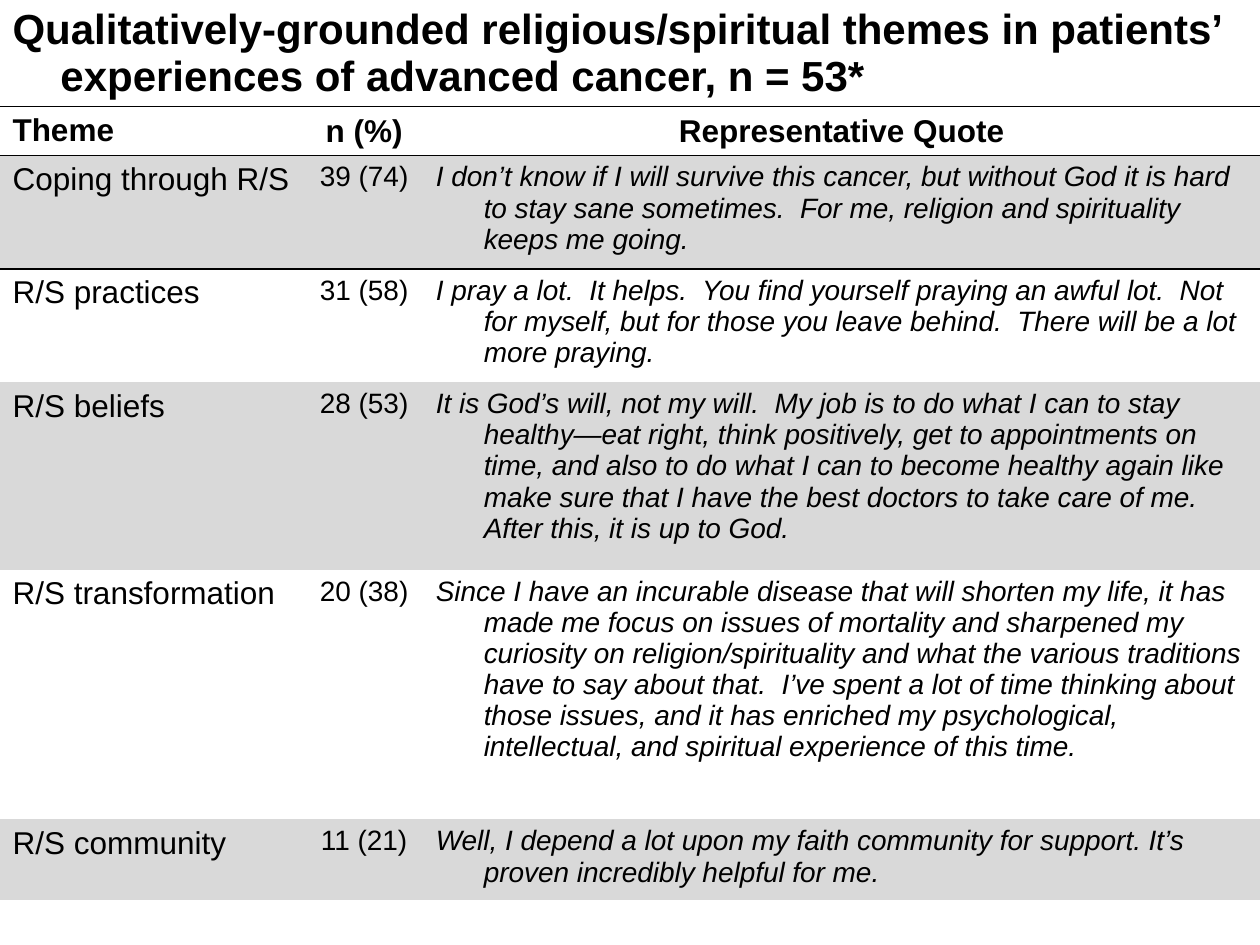
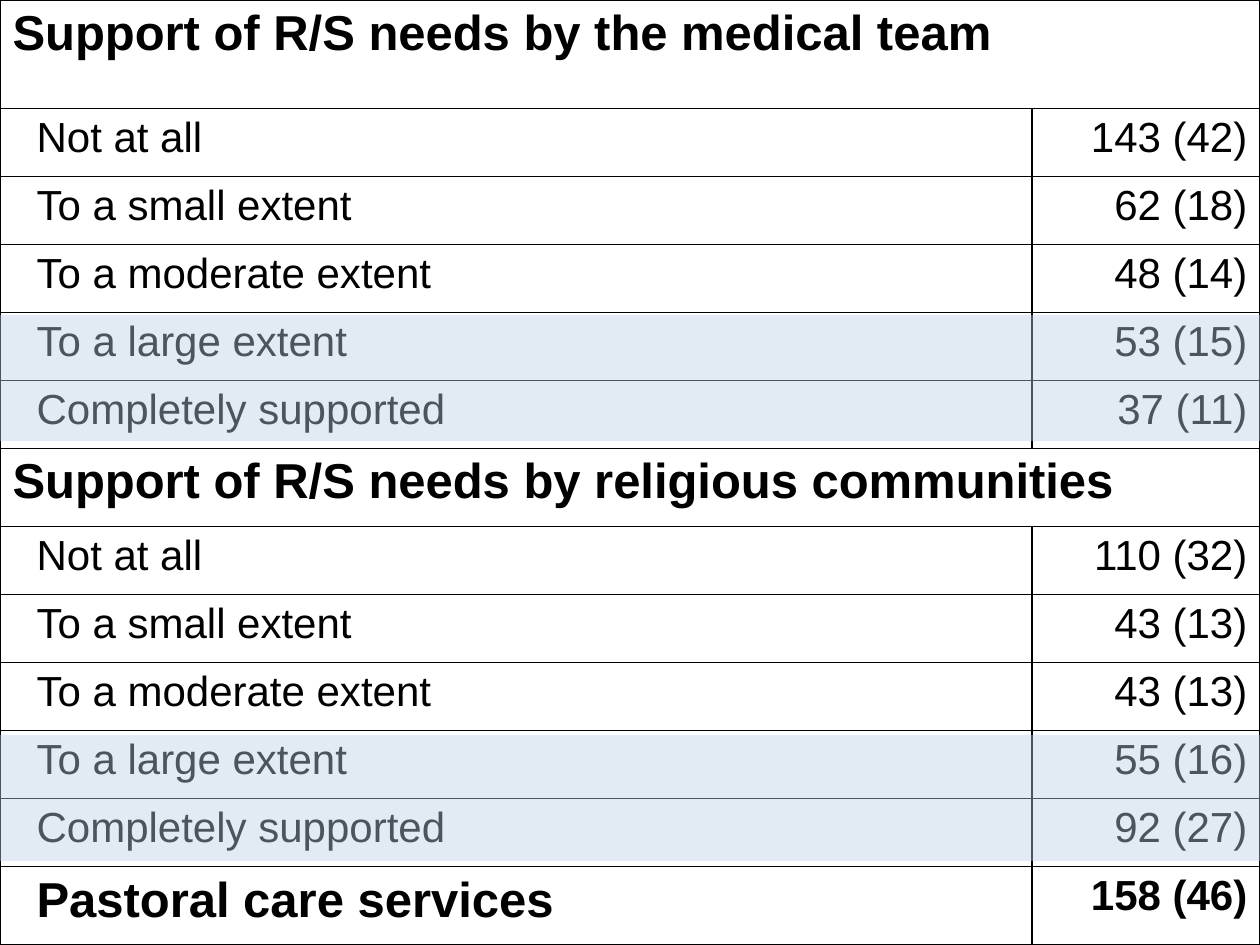
from dataclasses import dataclass

from lxml import etree
from pptx import Presentation
from pptx.dml.color import RGBColor
from pptx.enum.shapes import MSO_SHAPE
from pptx.enum.text import MSO_ANCHOR, PP_ALIGN
from pptx.oxml.ns import qn
from pptx.util import Inches, Pt

LEFT, CENTER, RIGHT = PP_ALIGN.LEFT, PP_ALIGN.CENTER, PP_ALIGN.RIGHT
TOP, BOTTOM = MSO_ANCHOR.TOP, MSO_ANCHOR.BOTTOM
RECTANGLE = MSO_SHAPE.RECTANGLE
PLAIN_TABLE_STYLE = "{2D5ABB26-0587-4C30-8999-92F81FD0307C}"


@dataclass(frozen=True)
class Theme:
    font: str = "Arial"
    ink: str = "000000"
    paper: str = "FFFFFF"
    stripe: str = "D9D9D9"
    highlight: str = "B9CDE5"
    highlight_alpha: int = 41
    rule: float = 1
    section_size: int = 28
    large_size: int = 24
    label_size: int = 18
    quote_size: int = 16
    hanging: float = 0.38
    option_indent: float = 0.19


THEME = Theme()
SLIDE_WIDTH, SLIDE_HEIGHT = 10, 7.5

THEMES_TITLE = ("Qualitatively-grounded religious/spiritual themes in patients’ "
                "experiences of advanced cancer, n = 53*")
THEMES_HEADER = ("Theme", "n (%)", "Representative Quote")
THEMES = [
    ("Coping through R/S", "39 (74)",
     "I don’t know if I will survive this cancer, but without God it is hard to stay "
     "sane sometimes.  For me, religion and spirituality keeps me going."),
    ("R/S practices", "31 (58)",
     "I pray a lot.  It helps.  You find yourself praying an awful lot.  Not for myself, "
     "but for those you leave behind.  There will be a lot more praying."),
    ("R/S beliefs", "28 (53)",
     "It is God’s will, not my will.  My job is to do what I can to stay healthy—eat "
     "right, think positively, get to appointments on time, and also to do what I can to "
     "become healthy again like make sure that I have the best doctors to take care of "
     "me.  After this, it is up to God."),
    ("R/S transformation", "20 (38)",
     "Since I have an incurable disease that will shorten my life, it has made me focus "
     "on issues of mortality and sharpened my curiosity on religion/spirituality and what "
     "the various traditions have to say about that.  I’ve spent a lot of time thinking "
     "about those issues, and it has enriched my psychological, intellectual, and "
     "spiritual experience of this time."),
    ("R/S community", "11 (21)",
     "Well, I depend a lot upon my faith community for support. It’s proven incredibly "
     "helpful for me."),
]
THEMES_COLUMNS = (2.42, 0.94, 6.64)
THEMES_ROWS = (0.84, 0.39, 0.9, 0.9, 1.49, 1.98, 0.64, 0.55)

EXTENTS = ("Not at all", "To a small extent", "To a moderate extent",
           "To a large extent", "Completely supported")
SUPPORT = [
    ("Support of R/S needs by the medical team",
     ("143 (42)", "62 (18)", "48 (14)", "53 (15)", "37 (11)")),
    ("Support of R/S needs by religious communities",
     ("110 (32)", "43 (13)", "43 (13)", "55 (16)", "92 (27)")),
]
PASTORAL_CARE = ("Pastoral care services", "158 (46)")
SUPPORT_COLUMNS = (8.19, 1.81)
FIRST_SECTION_ROW, SECTION_ROW, EXTENT_ROW = 0.86, 0.62, 0.54
HIGHLIGHT_TOPS = (SLIDE_HEIGHT / 3, SLIDE_HEIGHT * 7 / 9)
HIGHLIGHT_HEIGHT = 1


def add_plain_table(slide, columns, rows):
    """Add a full-width table that has no styling of its own."""
    frame = slide.shapes.add_table(len(rows), len(columns), 0, 0,
                                   Inches(sum(columns)), Inches(sum(rows)))
    table = frame.table
    table.first_row = table.horz_banding = False
    table._tbl.tblPr.find(qn("a:tableStyleId")).text = PLAIN_TABLE_STYLE
    for column, width in zip(table.columns, columns):
        column.width = Inches(width)
    for row, height in zip(table.rows, rows):
        row.height = Inches(height)
    return table


def write(cell, text, size, align=LEFT, bold=False, italic=False,
          indent=0, hanging=0, anchor=TOP):
    cell.vertical_anchor = anchor
    para = cell.text_frame.paragraphs[0]
    para.alignment = align
    properties = para._p.get_or_add_pPr()
    properties.set("marL", str(Inches(indent + hanging)))
    properties.set("indent", str(Inches(-hanging)))
    span = para.add_run()
    span.text = text
    span.font.name = THEME.font
    span.font.size = Pt(size)
    span.font.bold = bold
    span.font.italic = italic
    span.font.color.rgb = RGBColor.from_string(THEME.ink)


def rule_cell(cell, sides):
    """Draw borders on the sides named, in the order L, R, T, B."""
    properties = cell._tc.get_or_add_tcPr()
    for position, side in enumerate(sides):
        line = etree.Element(qn(f"a:ln{side}"), w=str(Pt(THEME.rule)))
        fill = etree.SubElement(line, qn("a:solidFill"))
        etree.SubElement(fill, qn("a:srgbClr"), val=THEME.ink)
        properties.insert(position, line)


def fill_cell(cell, color):
    cell.fill.solid()
    cell.fill.fore_color.rgb = RGBColor.from_string(color)


def build_themes(slide):
    table = add_plain_table(slide, THEMES_COLUMNS, THEMES_ROWS)
    last_row, last_column = len(THEMES_ROWS) - 1, len(THEMES_COLUMNS) - 1
    for row in (0, last_row):
        table.cell(row, 0).merge(table.cell(row, last_column))

    write(table.cell(0, 0), THEMES_TITLE, THEME.large_size, bold=True,
          hanging=THEME.hanging, anchor=BOTTOM)
    for column, heading in enumerate(THEMES_HEADER):
        write(table.cell(1, column), heading, THEME.label_size, bold=True,
              hanging=THEME.hanging, align=CENTER if column else LEFT,
              anchor=BOTTOM if column else TOP)
    for row, (label, count, quote) in enumerate(THEMES, start=2):
        write(table.cell(row, 0), label, THEME.label_size, hanging=THEME.hanging)
        write(table.cell(row, 1), count, THEME.quote_size, CENTER, hanging=THEME.hanging)
        write(table.cell(row, 2), quote, THEME.quote_size, italic=True,
              hanging=THEME.hanging)

    rules = {0: "B", 1: "TB", 2: "T"}
    for row in range(len(THEMES_ROWS)):
        striped = 2 <= row < last_row and row % 2 == 0
        for column in range(len(THEMES_COLUMNS)):
            cell = table.cell(row, column)
            rule_cell(cell, rules.get(row, ""))
            fill_cell(cell, THEME.stripe if striped else THEME.paper)


def add_highlight(slide, top):
    band = slide.shapes.add_shape(RECTANGLE, 0, Inches(top), Inches(SLIDE_WIDTH),
                                  Inches(HIGHLIGHT_HEIGHT))
    band.shadow.inherit = False
    band.line.fill.background()
    band.fill.solid()
    band.fill.fore_color.rgb = RGBColor.from_string(THEME.highlight)
    color = band._element.spPr.find(qn("a:solidFill"))[0]
    etree.SubElement(color, qn("a:alpha"), val=str(THEME.highlight_alpha * 1000))


def build_support(slide):
    extent_rows = [EXTENT_ROW] * len(EXTENTS)
    heights = [FIRST_SECTION_ROW, *extent_rows, SECTION_ROW, *extent_rows, SECTION_ROW]
    table = add_plain_table(slide, SUPPORT_COLUMNS, heights)

    for section, (title, counts) in enumerate(SUPPORT):
        top = section * (len(EXTENTS) + 1)
        table.cell(top, 0).merge(table.cell(top, 1))
        write(table.cell(top, 0), title, THEME.section_size, bold=True)
        for row, (extent, count) in enumerate(zip(EXTENTS, counts), start=top + 1):
            write(table.cell(row, 0), extent, THEME.large_size,
                  indent=THEME.option_indent)
            write(table.cell(row, 1), count, THEME.large_size, RIGHT)

    label, count = PASTORAL_CARE
    last_row = len(heights) - 1
    write(table.cell(last_row, 0), label, THEME.section_size, bold=True,
          indent=THEME.option_indent)
    write(table.cell(last_row, 1), count, THEME.large_size, RIGHT, bold=True)

    for cell in table.iter_cells():
        rule_cell(cell, "TB" if cell.is_spanned else "LRTB")
    for top in HIGHLIGHT_TOPS:
        add_highlight(slide, top)


def main():
    deck = Presentation()
    deck.slide_width, deck.slide_height = Inches(SLIDE_WIDTH), Inches(SLIDE_HEIGHT)
    blank = deck.slide_layouts[6]
    for build in (build_themes, build_support):
        build(deck.slides.add_slide(blank))
    deck.save("out.pptx")


if __name__ == "__main__":
    main()
